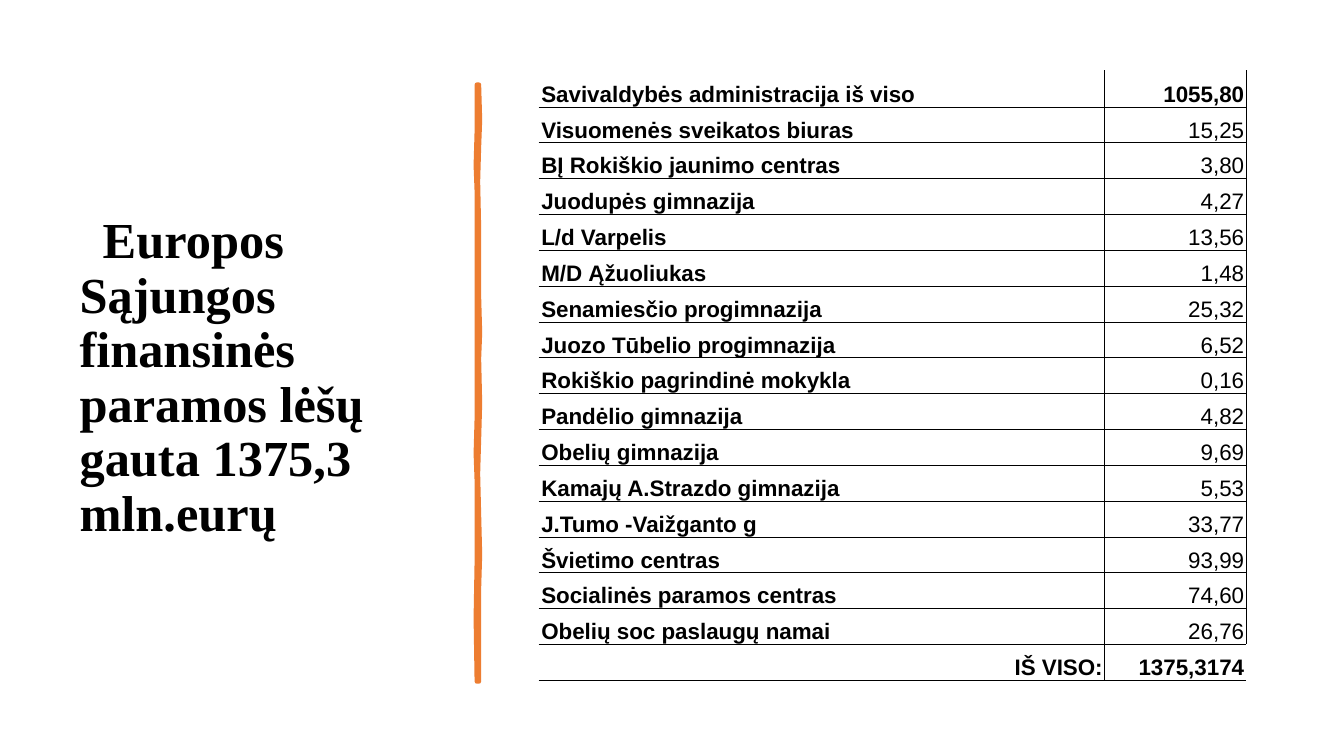
from lxml import etree
from pptx import Presentation
from pptx.dml.color import RGBColor
from pptx.enum.text import MSO_ANCHOR, PP_ALIGN
from pptx.oxml.ns import qn
from pptx.util import Inches, Pt

LEFT, RIGHT = PP_ALIGN.LEFT, PP_ALIGN.RIGHT
MIDDLE, BOTTOM = MSO_ANCHOR.MIDDLE, MSO_ANCHOR.BOTTOM
BLACK = RGBColor(0x00, 0x00, 0x00)
ORANGE = RGBColor(0xED, 0x7D, 0x31)

SLIDE_W, SLIDE_H = Inches(13.33), Inches(7.5)
TITLE_ONLY = 5
HUNDREDTH_INCH = 9144
THIN, THICK = Pt(0.5), Pt(1)

TITLE = "Europos Sąjungos finansinės paramos lėšų gauta 1375,3 mln.eurų"
SUPPORT = [
    ("Savivaldybės administracija iš viso", "1055,80"),
    ("Visuomenės sveikatos biuras", "15,25"),
    ("BĮ Rokiškio jaunimo centras", "3,80"),
    ("Juodupės gimnazija", "4,27"),
    ("L/d Varpelis", "13,56"),
    ("M/D Ąžuoliukas", "1,48"),
    ("Senamiesčio progimnazija", "25,32"),
    ("Juozo Tūbelio progimnazija", "6,52"),
    ("Rokiškio pagrindinė mokykla", "0,16"),
    ("Pandėlio gimnazija", "4,82"),
    ("Obelių gimnazija", "9,69"),
    ("Kamajų A.Strazdo gimnazija", "5,53"),
    ("J.Tumo -Vaižganto g", "33,77"),
    ("Švietimo centras", "93,99"),
    ("Socialinės paramos centras", "74,60"),
    ("Obelių soc paslaugų namai", "26,76"),
    ("IŠ VISO:", "1375,3174"),
]
# Edges of the brush stroke, in hundredths of an inch, both from top to bottom
STROKE_RIGHT = [(475, 84), (476, 119), (475, 146), (474, 180), (475, 226),
                (475, 294), (476, 330), (475, 356), (476, 400), (475, 436),
                (474, 470), (475, 510), (476, 550), (475, 584), (475, 676)]
STROKE_LEFT = [(473, 84), (473, 130), (472, 164), (473, 190), (473, 250),
               (473, 335), (473, 386), (473, 415), (472, 450), (473, 477),
               (473, 510), (473, 557), (472, 613), (473, 676)]


def box(left, top, width, height):
    """Turn shares of the slide, in percent, into a position and a size."""
    return [int(side * share / 100) for side, share in
            zip((SLIDE_W, SLIDE_H) * 2, (left, top, width, height))]


def style_runs(paragraph, font_name, size, bold):
    for run in paragraph.runs:
        run.font.name = font_name
        run.font.size = size
        run.font.bold = bold
        run.font.color.rgb = BLACK


def add_title(slide):
    title = slide.shapes.title
    title.left, title.top, title.width, title.height = box(5.17, 9.33, 28.06, 81.5)
    frame = title.text_frame
    frame.text = TITLE
    frame.word_wrap = True
    frame.vertical_anchor = MIDDLE
    paragraph = frame.paragraphs[0]
    paragraph.alignment = LEFT
    paragraph.line_spacing = 0.9
    paragraph._p.get_or_add_pPr().set("indent", str(Inches(0.23)))
    style_runs(paragraph, "Times New Roman", Pt(36), True)


def add_brush_stroke(slide):
    outline = STROKE_RIGHT + STROKE_LEFT[::-1]
    builder = slide.shapes.build_freeform(*outline[0], scale=HUNDREDTH_INCH)
    builder.add_line_segments(outline[1:], close=True)
    stroke = builder.convert_to_shape()
    stroke.shadow.inherit = False
    stroke.fill.solid()
    stroke.fill.fore_color.rgb = ORANGE
    stroke.line.color.rgb = ORANGE
    stroke.line.width = Pt(3.25)
    etree.SubElement(stroke.line._get_or_add_ln(), qn("a:round"))


def set_borders(cell, **widths):
    """Draw the given sides (L, R, T, B, in that order) in black."""
    properties = cell._tc.get_or_add_tcPr()
    for side, width in widths.items():
        if width:
            border = etree.SubElement(properties, qn(f"a:ln{side}"), w=str(width))
            fill = etree.SubElement(border, qn("a:solidFill"))
            etree.SubElement(fill, qn("a:srgbClr"), val=str(BLACK))


def fill_cell(cell, text, alignment, bold):
    cell.text = text
    cell.vertical_anchor = BOTTOM
    cell.margin_left = cell.margin_right = cell.margin_top = Inches(0.02)
    cell.margin_bottom = 0
    paragraph = cell.text_frame.paragraphs[0]
    paragraph.alignment = alignment
    style_runs(paragraph, "Arial", Pt(16), bold)
    cell.fill.background()


def add_support_table(slide):
    left, top, width, height = box(40.13, 9.4, 52.59, 80.67)
    last = len(SUPPORT) - 1
    table = slide.shapes.add_table(len(SUPPORT), 2, left, top, width, height).table
    table.first_row = table.horz_banding = False
    table.columns[0].width = int(width * 0.8)
    table.columns[1].width = width - table.columns[0].width
    for row, (institution, amount) in enumerate(SUPPORT):
        table.rows[row].height = height // len(SUPPORT)
        is_total = row == last
        divider = THICK if is_total else THIN
        above = divider if row else None
        below = THICK if row >= last - 1 else THIN
        name_cell, amount_cell = table.cell(row, 0), table.cell(row, 1)
        set_borders(name_cell, R=divider, T=above, B=below)
        set_borders(amount_cell, L=divider, R=None if is_total else THIN,
                    T=above, B=below)
        fill_cell(name_cell, institution, RIGHT if is_total else LEFT, True)
        fill_cell(amount_cell, amount, RIGHT, row in (0, last))


def main():
    deck = Presentation()
    deck.slide_width, deck.slide_height = SLIDE_W, SLIDE_H
    slide = deck.slides.add_slide(deck.slide_layouts[TITLE_ONLY])
    add_title(slide)
    add_brush_stroke(slide)
    add_support_table(slide)
    deck.save("out.pptx")


if __name__ == "__main__":
    main()
